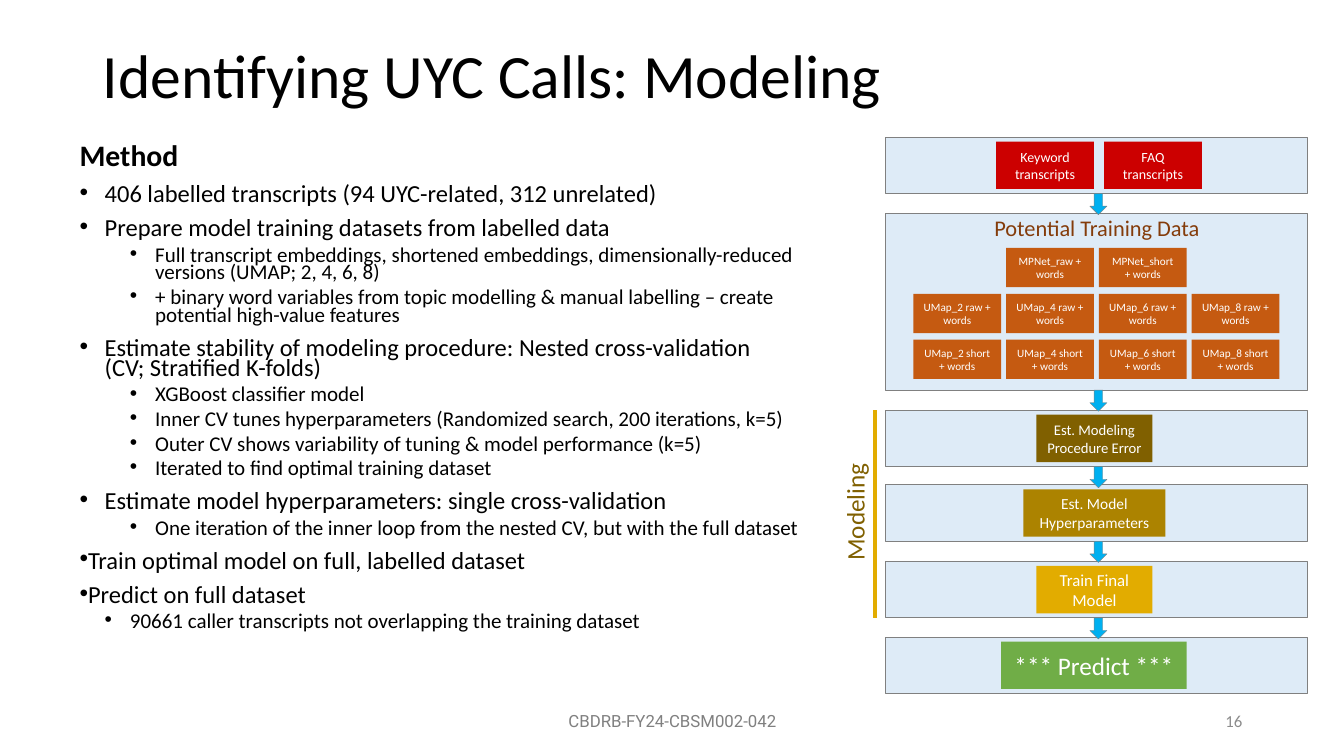
from pptx import Presentation
from pptx.dml.color import RGBColor
from pptx.enum.shapes import MSO_CONNECTOR, MSO_SHAPE
from pptx.enum.text import MSO_ANCHOR as ANCHOR, PP_ALIGN as ALIGN
from pptx.oxml.ns import qn
from pptx.util import Inches, Pt
from lxml import etree

BLACK = RGBColor(0x00, 0x00, 0x00)
WHITE = RGBColor(0xFF, 0xFF, 0xFF)
GREY = RGBColor(0x80, 0x80, 0x80)
PAGE_GREY = RGBColor(0x8C, 0x8C, 0x8C)
PALE_BLUE = RGBColor(0xDE, 0xEB, 0xF7)
SKY = RGBColor(0x00, 0xB0, 0xF0)
RED = RGBColor(0xCC, 0x00, 0x00)
ORANGE = RGBColor(0xC5, 0x5A, 0x11)
BROWN = RGBColor(0x84, 0x3C, 0x0B)
OLIVE = RGBColor(0x80, 0x60, 0x00)
MUSTARD = RGBColor(0xAC, 0x83, 0x00)
GOLD = RGBColor(0xE2, 0xAC, 0x00)
GREEN = RGBColor(0x70, 0xAD, 0x47)

# Content
TITLE = "Identifying UYC Calls: Modeling"
FOOTER = "CBDRB-FY24-CBSM002-042"
PAGE = "16"

# (level, left indent in inches or None for no bullet, text)
METHOD = [
    (0, None, "Method"),
    (0, 0.25, "406 labelled transcripts (94 UYC-related, 312 unrelated)"),
    (0, 0.25, "Prepare model training datasets from labelled data"),
    (1, 0.75, "Full transcript embeddings, shortened embeddings, "
              "dimensionally-reduced versions (UMAP; 2, 4, 6, 8)"),
    (1, 0.75, "+ binary word variables from topic modelling & manual labelling – "
              "create potential high-value features"),
    (0, 0.25, "Estimate stability of modeling procedure: Nested cross-validation "
              "\v(CV; Stratified K-folds)"),
    (1, 0.75, "XGBoost classifier model"),
    (1, 0.75, "Inner CV tunes hyperparameters (Randomized search, 200 iterations, k=5)"),
    (1, 0.75, "Outer CV shows variability of tuning & model performance (k=5)"),
    (1, 0.75, "Iterated to find optimal training dataset"),
    (0, 0.25, "Estimate model hyperparameters: single cross-validation"),
    (1, 0.75, "One iteration of the inner loop from the nested CV, "
              "but with the full dataset"),
    (0, 0, "Train optimal model on full, labelled dataset"),
    (0, 0, "Predict on full dataset"),
    (1, 0.5, "90661 caller transcripts not overlapping the training dataset"),
]

# (panel top, panel height, boxes); a box is (left, width, fill, size, text)
STAGES = [
    (1.36, 0.56, [(9.88, 0.97, RED, 10, "Keyword transcripts"),
                  (10.95, 0.97, RED, 10, "FAQ transcripts")]),
    (2.12, 1.75, []),
    (4.07, 0.56, [(10.28, 1.15, OLIVE, 10.5, "Est. Modeling Procedure Error")]),
    (4.81, 0.56, [(10.15, 1.41, MUSTARD, 11, "Est. Model Hyperparameters")]),
    (5.57, 0.56, [(10.28, 1.15, GOLD, 12, "Train Final Model")]),
    (6.32, 0.56, [(9.93, 1.84, GREEN, 18, "*** Predict ***")]),
]

# (first column, side inset, labels)
DATASETS = [
    (1, 0.1, ["MPNet_raw + words", "MPNet_short + words"]),
    (0, 0.08, [f"UMap_{n} raw + words" for n in (2, 4, 6, 8)]),
    (0, 0.08, [f"UMap_{n} short + words" for n in (2, 4, 6, 8)]),
]
CELL_LEFT, CELL_TOP = 9.06, 2.46
CELL_W, CELL_H = 0.87, 0.39
CELL_DX, CELL_DY = 0.92, 0.455

prs = Presentation()
prs.slide_width, prs.slide_height = Inches(13.33), Inches(7.5)
s = prs.slides.add_slide(prs.slide_layouts[5])


def write(p, text, size=12, color=WHITE, font="Calibri", bold=False, align=ALIGN.CENTER):
    p.text = text
    p.alignment = align
    for r in p.runs:
        r.font.size, r.font.name, r.font.bold = Pt(size), font, bold
        r.font.color.rgb = color


def label(x, y, w, h, text, anchor=ANCHOR.MIDDLE, wrap=True, **fmt):
    sp = s.shapes.add_textbox(Inches(x), Inches(y), Inches(w), Inches(h))
    tf = sp.text_frame
    tf.word_wrap, tf.vertical_anchor = wrap, anchor
    write(tf.paragraphs[0], text, **fmt)
    return sp


def block(x, y, w, h, fill, line=None, kind=MSO_SHAPE.RECTANGLE, text=None, inset=0.1, **fmt):
    sp = s.shapes.add_shape(kind, Inches(x), Inches(y), Inches(w), Inches(h))
    sp.shadow.inherit = False
    sp.fill.solid()
    sp.fill.fore_color.rgb = fill
    if line:
        sp.line.color.rgb, sp.line.width = GREY, Pt(line)
    else:
        sp.line.fill.background()
    if text:
        tf = sp.text_frame
        tf.word_wrap, tf.vertical_anchor = True, ANCHOR.MIDDLE
        tf.margin_left = tf.margin_right = Inches(inset)
        write(tf.paragraphs[0], text, **fmt)


# Title
title = s.shapes.title
title.left, title.top = Inches(0.92), Inches(0.4)
title.width, title.height = Inches(11.5), Inches(1.45)
title.text_frame.vertical_anchor = ANCHOR.TOP
title.text_frame.word_wrap = True
p = title.text_frame.paragraphs[0]
write(p, TITLE, size=44, color=BLACK, align=ALIGN.LEFT)
p.line_spacing = 0.9

# Method list
tf = s.shapes.add_textbox(Inches(0.69), Inches(1.41), Inches(7.59), Inches(5.14)).text_frame
tf.word_wrap = True
for i, (level, indent, text) in enumerate(METHOD):
    p = tf.paragraphs[0] if i == 0 else tf.add_paragraph()
    heading = indent is None
    size = 21.2 if heading else (17.5, 15)[level]
    write(p, text, size=size, color=BLACK, bold=heading, align=ALIGN.LEFT)
    p.level, p.line_spacing = level, 0.7
    if i:
        p.space_before = Pt((10, 5)[level])
    if not heading:
        pPr = p._p.get_or_add_pPr()
        pPr.set("marL", str(Inches(indent)))
        pPr.set("indent", str(-Inches(0.25)))
        etree.SubElement(pPr, qn("a:buFont")).set("typeface", "Arial")
        etree.SubElement(pPr, qn("a:buChar")).set("char", "•")

# Stage panels with their boxes
for top, height, boxes in STAGES:
    block(8.78, top, 4.19, height, PALE_BLUE, line=0.75)
    for x, w, fill, size, text in boxes:
        block(x, top + 0.045, w, 0.47, fill, text=text, size=size)

# Potential training data
label(9.75, 2.08, 2.26, 0.37, "Potential Training Data", wrap=False,
      anchor=ANCHOR.TOP, size=16, color=BROWN)
for row, (first, inset, names) in enumerate(DATASETS):
    for col, name in enumerate(names, first):
        block(CELL_LEFT + col * CELL_DX, CELL_TOP + row * CELL_DY, CELL_W, CELL_H,
              ORANGE, text=name, inset=inset, size=8)

# Arrows between stages
for top, height, _ in STAGES[:-1]:
    block(10.81, top + height, 0.17, 0.21, SKY, line=0.25, kind=MSO_SHAPE.DOWN_ARROW)

# Modeling bracket
label(7.48, 4.88, 1.99, 0.4, "Modeling", anchor=ANCHOR.TOP, size=18, color=OLIVE).rotation = 270
bar = s.shapes.add_connector(MSO_CONNECTOR.STRAIGHT, Inches(8.68), Inches(4.07),
                             Inches(8.68), Inches(6.13))
bar.line.color.rgb, bar.line.width = GOLD, Pt(3)
etree.SubElement(bar._element.spPr, qn("a:effectLst"))

# Footer
label(4.42, 6.95, 4.5, 0.4, FOOTER, color=GREY, font="Roboto")
label(9.42, 6.95, 3, 0.4, PAGE, color=PAGE_GREY, align=ALIGN.RIGHT)

prs.save("out.pptx")
